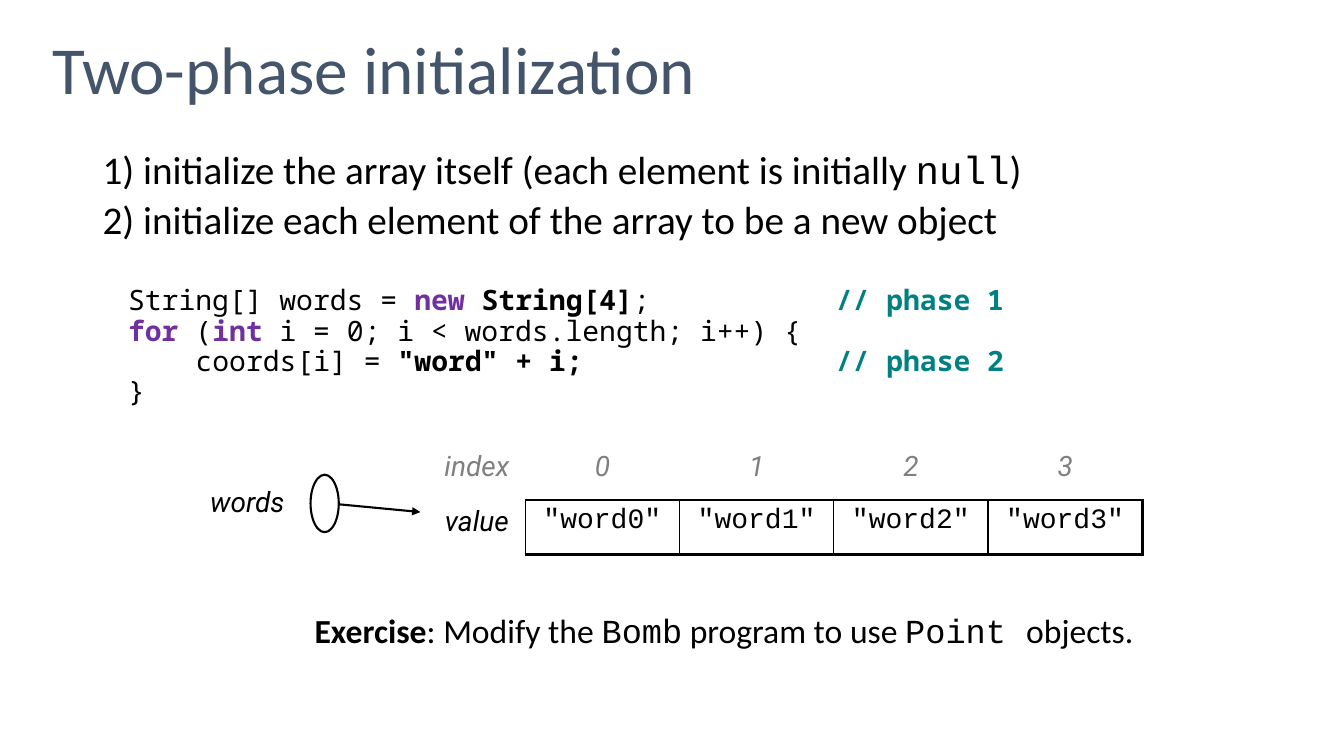
from dataclasses import dataclass
from lxml.etree import SubElement
from pptx import Presentation
from pptx.dml.color import RGBColor
from pptx.enum.shapes import MSO_CONNECTOR as Link, MSO_SHAPE as Shape
from pptx.enum.text import MSO_ANCHOR as Anchor, PP_ALIGN as Align
from pptx.oxml import parse_xml
from pptx.oxml.ns import nsdecls, qn
from pptx.util import Pt

SCALE = 9144


@dataclass(frozen=True)
class Theme:
    ink: str = "000000"
    paper: str = "FFFFFF"
    heading: str = "44546A"
    keyword: str = "7030A0"
    comment: str = "008080"
    muted: str = "808080"
    body: str = "Calibri"
    literal: str = "Courier New"
    code: str = "Noto Sans Mono"
    label: str = "Roboto"
    title_size: int = 48
    list_size: int = 28
    note_size: int = 24
    code_size: int = 20
    thin: float = 1
    line: float = 1.5
    thick: float = 2.25


class Slide:
    def __init__(self, deck, theme):
        self.theme = theme
        self.page = deck.slides.add_slide(deck.slide_layouts[6])

    def box(self, left, top, width, height, inset=(10, 5), anchor=Anchor.TOP):
        shape = self.page.shapes.add_textbox(*(n * SCALE for n in (left, top, width, height)))
        frame = shape.text_frame
        frame.word_wrap = True
        frame.vertical_anchor = anchor
        frame.margin_left = frame.margin_right = inset[0] * SCALE
        frame.margin_top = frame.margin_bottom = inset[1] * SCALE
        return frame

    def para(self, frame, spans, size, face=None, color=None, italic=None,
             align=Align.LEFT, spacing=1.0, before=0, tabs=()):
        first = frame.paragraphs[0]
        para = frame.add_paragraph() if first.runs else first
        para.alignment, para.line_spacing, para.space_before = align, spacing, Pt(before)
        if tabs:
            stops = SubElement(para._p.get_or_add_pPr(), qn("a:tabLst"))
            for stop in tabs:
                SubElement(stops, qn("a:tab"), pos=str(stop * SCALE), algn="l")
        para.font.size, para.font.italic = Pt(size), italic
        if face:
            para.font.name = face
        if color:
            para.font.color.rgb = RGBColor.from_string(color)
        for text, style in spans:
            span = para.add_run()
            span.text = text
            if "bold" in style:
                span.font.bold = style["bold"]
            if "face" in style:
                span.font.name = style["face"]
            if "color" in style:
                span.font.color.rgb = RGBColor.from_string(style["color"])

    def ellipse(self, left, top, width, height):
        shape = self.page.shapes.add_shape(Shape.OVAL, *(n * SCALE for n in (left, top, width, height)))
        shape.shadow.inherit = False
        shape.fill.solid()
        shape.fill.fore_color.rgb = RGBColor.from_string(self.theme.paper)
        shape.line.color.rgb = RGBColor.from_string(self.theme.ink)
        shape.line.width = Pt(self.theme.line)

    def arrow(self, *ends):
        link = self.page.shapes.add_connector(Link.STRAIGHT, *(n * SCALE for n in ends))
        link.line.color.rgb = RGBColor.from_string(self.theme.ink)
        link.line.width = Pt(self.theme.line)
        SubElement(link.line._get_or_add_ln(), qn("a:tailEnd"), type="triangle")
        SubElement(link._element.spPr, qn("a:effectLst"))

    def borders(self, cell, widths):
        properties = cell._tc.get_or_add_tcPr()
        for place, (side, width) in enumerate(zip("LRTB", widths)):
            paint = f'<a:solidFill><a:srgbClr val="{self.theme.ink}"/></a:solidFill>' if width else "<a:noFill/>"
            edge = f'<a:ln{side} {nsdecls("a")} w="{int(Pt(width))}">{paint}</a:ln{side}>'
            properties.insert(place, parse_xml(edge))

    def array(self, left, top, label_width, value_width, row_height, values):
        theme, count = self.theme, len(values)
        width = label_width + count * value_width
        table = self.page.shapes.add_table(2, count + 1, *(
            n * SCALE for n in (left, top, width, 2 * row_height))).table
        table.first_row = table.horz_banding = False
        rows = (("index", *map(str, range(count))), ("value", *values))
        for y, texts in enumerate(rows):
            table.rows[y].height = row_height * SCALE
            for x, text in enumerate(texts):
                table.columns[x].width = (value_width if x else label_width) * SCALE
                cell = table.cell(y, x)
                cell.fill.background()
                literal = bool(x and y)
                self.para(cell.text_frame, [(text, {})], theme.code_size,
                          theme.literal if literal else theme.label,
                          theme.ink if y else theme.muted, not literal, Align.CENTER)
                thin = theme.thin
                if literal:
                    self.borders(cell, (thin, theme.thick if x == count else thin, thin, theme.thick))
                else:
                    self.borders(cell, (0, thin if y else 0, 0, thin if x else 0))


def main():
    """Build the slide on two-phase array initialization."""
    theme = Theme()
    deck = Presentation()
    deck.slide_width, deck.slide_height = 1333 * SCALE, 750 * SCALE
    slide = Slide(deck, theme)
    bold, plain = {"bold": True}, {}
    body, literal = {"face": theme.body}, {"face": theme.literal}
    keyword = {"color": theme.keyword, "bold": True}
    comment = {"color": theme.comment, "bold": True}

    title = slide.box(42, 0, 1250, 145, anchor=Anchor.MIDDLE)
    slide.para(title, [("Two-phase initialization", plain)], theme.title_size,
               theme.body, theme.heading, spacing=0.9)

    phases = slide.box(92, 145, 1200, 110)
    for spans in (
        [("1) initialize the array itself (each element is initially ", body), ("null", literal), (")", body)],
        [("2) initialize each element of the array to be a new object", body)],
    ):
        slide.para(phases, spans, theme.list_size, color=theme.ink, spacing=0.9, before=5)

    code = slide.box(127, 287, 1165, 140, inset=(0, 0))
    for spans in (
        [("String[] words = ", plain), ("new", keyword), (" String[4]", bold), (";", plain),
         ("\t// phase 1", comment)],
        [("for ", keyword), ("(", plain), ("int ", keyword), ("i = 0; i < words.length; i++) {", plain)],
        [("\tcoords[i] = ", plain), ('"word" + i;', bold), ("\t// phase 2", comment)],
        [("}", plain)],
    ):
        slide.para(code, spans, theme.code_size, theme.code, theme.ink,
                   spacing=0.8, before=2.5, tabs=(67, 702) if spans[0][0][0] == "\t" else (702,))

    slide.array(425, 442, 96, 153, 54, [f'"word{i}"' for i in range(4)])

    name = slide.box(167, 476, 125, 49)
    slide.para(name, [("words", plain)], theme.code_size, theme.label, theme.ink, True, Align.RIGHT)
    slide.arrow(333, 500, 417, 508)
    slide.ellipse(308, 471, 28, 57)

    exercise = slide.box(208, 608, 926, 42)
    slide.para(exercise, [("Exercise", {**body, **bold}), (": Modify the ", body), ("Bomb", literal),
                          (" program to use ", body), ("Point ", literal), ("objects.", body)],
               theme.note_size, color=theme.ink, align=Align.RIGHT, spacing=0.8)

    deck.save("out.pptx")


if __name__ == "__main__":
    main()
